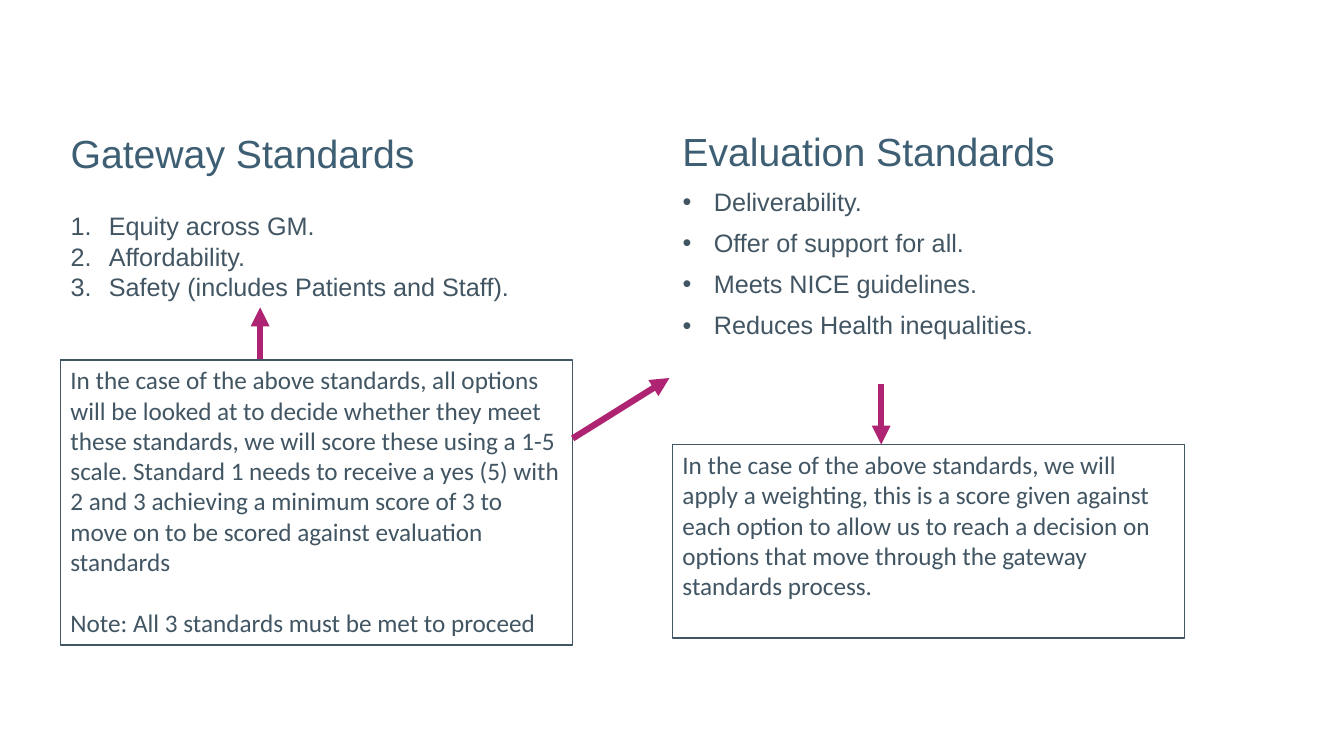
from pptx import Presentation
from pptx.dml.color import RGBColor
from pptx.enum.shapes import MSO_CONNECTOR, MSO_SHAPE
from pptx.enum.text import MSO_ANCHOR, MSO_AUTO_SIZE, PP_ALIGN
from pptx.oxml.ns import qn
from pptx.util import Inches, Pt
from lxml import etree

STRAIGHT = MSO_CONNECTOR.STRAIGHT
RECTANGLE = MSO_SHAPE.RECTANGLE
TOP, MIDDLE = MSO_ANCHOR.TOP, MSO_ANCHOR.MIDDLE
NO_AUTOFIT = MSO_AUTO_SIZE.NONE
LEFT = PP_ALIGN.LEFT

TWO_CONTENT_LAYOUT = 3
GATEWAY_LEFT, EVALUATION_LEFT, COLUMN_WIDTH = 0.6, 6.67, 5.08
HEADING_COLOR, SLATE, LIST_COLOR = "3E5F73", "415563", "425563"
MAGENTA, WHITE = "AE2473", "FFFFFF"

GATEWAY_STANDARDS = [
    "Equity across GM.",
    "Affordability.",
    "Safety (includes Patients and Staff).",
]
EVALUATION_STANDARDS = [
    "Deliverability.",
    "Offer of support for all.",
    "Meets NICE guidelines.",
    "Reduces Health inequalities.",
]
GATEWAY_NOTES = [
    "In the case of the above standards, all options will be looked at to decide "
    "whether they meet these standards, we will score these using a 1-5 scale. "
    "Standard 1 needs to receive a yes (5) with 2 and 3 achieving a minimum score "
    "of 3 to move on to be scored against evaluation standards",
    "Note: All 3 standards must be met to proceed",
]
EVALUATION_NOTES = [
    "In the case of the above standards, we will apply a weighting, this is a score "
    "given against each option to allow us to reach a decision on options that move "
    "through the gateway standards process.",
]
ARROWS = [
    ((2.58, 3.56), (2.58, 3.05)),
    ((8.74, 3.81), (8.74, 4.41)),
    ((5.68, 4.35), (6.64, 3.75)),
]


def color(value):
    """Return the colour for a hex string."""
    return RGBColor.from_string(value)


def place(shape, left, top, height):
    """Move a shape into a column and give it the column width."""
    shape.left, shape.top = Inches(left), Inches(top)
    shape.width, shape.height = Inches(COLUMN_WIDTH), Inches(height)


def write(shape, lines, font, size, hex_color, anchor=TOP, spacing=1.0, gap=0):
    """Fill a shape with left-aligned paragraphs in one style."""
    frame = shape.text_frame
    frame.word_wrap = True
    frame.auto_size = NO_AUTOFIT
    frame.vertical_anchor = anchor
    frame.text = "\n".join(lines)
    for index, paragraph in enumerate(frame.paragraphs):
        paragraph.alignment = LEFT
        paragraph.line_spacing = spacing
        paragraph.space_before = Pt(gap if index else 0)
        paragraph.space_after = Pt(0)
        for run in paragraph.runs:
            run.font.name = font
            run.font.size = Pt(size)
            run.font.color.rgb = color(hex_color)


def add_heading(shape, text, left, top):
    """Turn a shape into a column heading."""
    place(shape, left, top, 0.57)
    write(shape, [text], "Arial", 28, HEADING_COLOR, MIDDLE, 0.9)


def add_markers(shape, indent, tag, **attributes):
    """Give each paragraph a hanging bullet or number."""
    for paragraph in shape.text_frame.paragraphs:
        properties = paragraph._p.get_or_add_pPr()
        properties.set("marL", str(Inches(indent)))
        properties.set("indent", str(-Inches(indent)))
        if tag == "a:buChar":
            etree.SubElement(properties, qn("a:buFont"), typeface="Arial")
        else:
            etree.SubElement(properties, qn("a:buFontTx"))
        etree.SubElement(properties, qn(tag), **attributes)


def add_note_box(slide, lines, left, top, height):
    """Add an outlined box of explanatory text."""
    box = slide.shapes.add_shape(RECTANGLE, 0, 0, 0, 0)
    place(box, left, top, height)
    box.shadow.inherit = False
    box.fill.solid()
    box.fill.fore_color.rgb = color(WHITE)
    box.line.color.rgb = color(SLATE)
    box.line.width = Pt(1)
    write(box, lines, "Calibri", 18, SLATE, gap=22)


def add_arrow(slide, start, end):
    """Add a thick arrow between two points."""
    points = [Inches(value) for value in (*start, *end)]
    arrow = slide.shapes.add_connector(STRAIGHT, *points)
    arrow.line.color.rgb = color(MAGENTA)
    arrow.line.width = Pt(4.5)
    etree.SubElement(arrow.line._get_or_add_ln(), qn("a:tailEnd"), type="triangle")
    etree.SubElement(arrow._element.spPr, qn("a:effectLst"))


def main():
    """Build the standards slide and save it."""
    presentation = Presentation()
    presentation.slide_width, presentation.slide_height = Inches(13.33), Inches(7.5)
    layout = presentation.slide_layouts[TWO_CONTENT_LAYOUT]
    slide = presentation.slides.add_slide(layout)
    title, gateway_list, evaluation_list = list(slide.placeholders)[:3]

    add_heading(title, "Gateway Standards", GATEWAY_LEFT, 1.26)
    evaluation_heading = slide.shapes.add_textbox(0, 0, 0, 0)
    add_heading(evaluation_heading, "Evaluation Standards", EVALUATION_LEFT, 1.24)

    place(gateway_list, GATEWAY_LEFT, 2.04, 1.31)
    write(gateway_list, GATEWAY_STANDARDS, "Arial", 18, SLATE)
    add_markers(gateway_list, 0.38, "a:buAutoNum", type="arabicPeriod")

    place(evaluation_list, EVALUATION_LEFT, 1.83, 4.76)
    write(evaluation_list, EVALUATION_STANDARDS, "Arial", 18, LIST_COLOR,
          spacing=0.9, gap=10)
    add_markers(evaluation_list, 0.31, "a:buChar", char="•")

    add_note_box(slide, EVALUATION_NOTES, EVALUATION_LEFT, 4.41, 1.92)
    add_note_box(slide, GATEWAY_NOTES, GATEWAY_LEFT, 3.57, 2.83)
    for start, end in ARROWS:
        add_arrow(slide, start, end)
    presentation.save("out.pptx")


if __name__ == "__main__":
    main()
